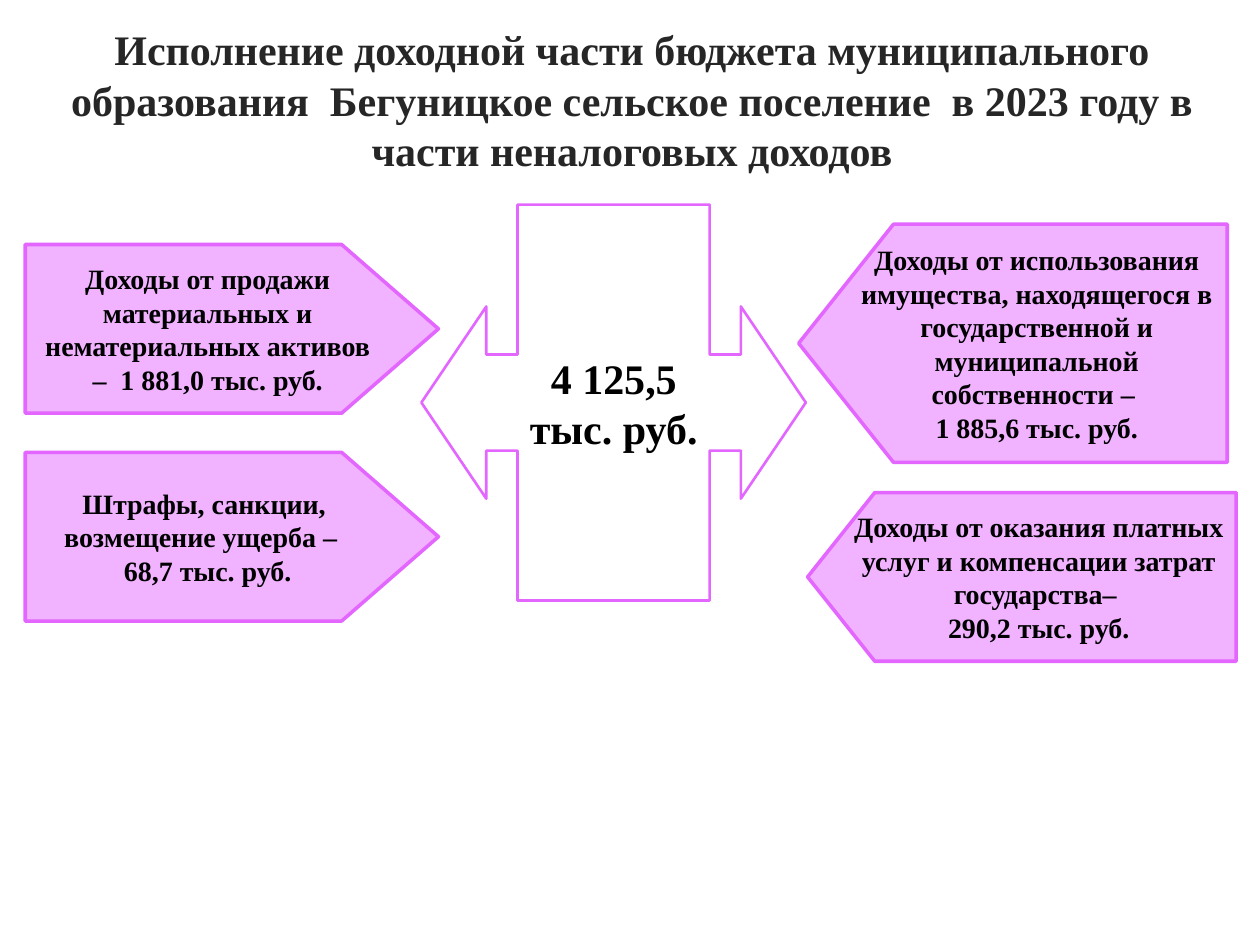
from dataclasses import dataclass

from pptx import Presentation
from pptx.dml.color import RGBColor
from pptx.enum.shapes import MSO_SHAPE
from pptx.enum.text import MSO_ANCHOR, MSO_AUTO_SIZE, PP_ALIGN
from pptx.util import Cm, Pt

PENTAGON = MSO_SHAPE.PENTAGON
CALLOUT = MSO_SHAPE.UP_DOWN_ARROW_CALLOUT
CENTER = PP_ALIGN.CENTER
MIDDLE, BOTTOM = MSO_ANCHOR.MIDDLE, MSO_ANCHOR.BOTTOM
NO_AUTOFIT = MSO_AUTO_SIZE.NONE
TITLE_ONLY = 5


@dataclass(frozen=True)
class Theme:
    font: str = "Times New Roman"
    title: RGBColor = RGBColor(0x26, 0x26, 0x26)
    text: RGBColor = RGBColor(0, 0, 0)
    white: RGBColor = RGBColor(0xFF, 0xFF, 0xFF)
    pink: RGBColor = RGBColor(0xF1, 0xB2, 0xFF)
    outline: RGBColor = RGBColor(0xE3, 0x66, 0xFF)
    large: int = 24
    small: int = 16


THEME = Theme()
PLATE_WIDTH, PLATE_HEIGHT = 8.33, 3.4
RIGHT_WIDTH = 8.64

# Left, top, width, height in cm; point depth; points left; paragraphs
INCOME_PLATES = [
    (16.1, 4.52, RIGHT_WIDTH, 4.8, 0.398, True,
     ["Доходы от использования имущества, находящегося в государственной "
      "и муниципальной собственности – ",
      "1 885,6 тыс. руб."]),
    (0.51, 4.93, PLATE_WIDTH, PLATE_HEIGHT, 0.574, False,
     ["Доходы от продажи материальных и нематериальных активов "
      "–  1 881,0 тыс. руб."]),
    (0.51, 9.12, PLATE_WIDTH, PLATE_HEIGHT, 0.574, False,
     ["Штрафы, санкции, ", "возмещение ущерба –  ", "68,7 тыс. руб."]),
    (16.28, 9.93, RIGHT_WIDTH, PLATE_HEIGHT, 0.398, True,
     ["Доходы от оказания платных услуг и компенсации затрат государства– ",
      "290,2 тыс. руб."]),
]


def write_text(frame, lines, size, color, anchor):
    frame.auto_size = NO_AUTOFIT
    frame.word_wrap = True
    frame.vertical_anchor = anchor
    for index, line in enumerate(lines):
        para = frame.paragraphs[0] if index == 0 else frame.add_paragraph()
        para.alignment = CENTER
        span = para.add_run()
        span.text = line
        span.font.name = THEME.font
        span.font.size = Pt(size)
        span.font.bold = True
        span.font.color.rgb = color


def add_title(page, text):
    box = page.shapes.title
    box.left, box.top, box.width, box.height = Cm(0.69), Cm(0.41), Cm(24.1), Cm(3.12)
    frame = box.text_frame
    frame.margin_left = frame.margin_right = frame.margin_bottom = 0
    frame.margin_top = Cm(0.13)
    write_text(frame, [text], THEME.large, THEME.title, BOTTOM)


def add_outlined_shape(page, kind, place, adjustments, fill, line_width):
    box = page.shapes.add_shape(kind, *map(Cm, place))
    box.shadow.inherit = False
    for index, value in enumerate(adjustments):
        box.adjustments[index] = value
    box.fill.solid()
    box.fill.fore_color.rgb = fill
    box.line.color.rgb = THEME.outline
    box.line.width = Pt(line_width)
    return box


def add_total(page, lines):
    box = add_outlined_shape(page, CALLOUT, (8.38, 4.24, 7.98, 7.75),
                             (0.25, 0.25, 0.169, 0.5), THEME.white, 1.5)
    box.rotation = 270
    write_text(box.text_frame, lines, THEME.large, THEME.text, MIDDLE)
    box.text_frame.word_wrap = False
    # Vertical text cancels the quarter turn of the shape
    box.element.txBody.bodyPr.set("vert", "eaVert")


def add_income_plate(page, left, top, width, height, depth, points_left, lines):
    box = add_outlined_shape(page, PENTAGON, (left, top, width, height),
                             (depth,), THEME.pink, 2)
    write_text(box.text_frame, lines, THEME.small, THEME.text, MIDDLE)
    if points_left:
        # Turn the shape and turn its text back upright
        box.rotation = 180
        box.element.txBody.bodyPr.set("rot", str(180 * 60000))


def main():
    deck = Presentation()
    deck.slide_width, deck.slide_height = Cm(25.4), Cm(19.05)
    page = deck.slides.add_slide(deck.slide_layouts[TITLE_ONLY])

    # Heading
    add_title(page, "Исполнение доходной части бюджета муниципального "
                    "образования  Бегуницкое сельское поселение  в 2023 году "
                    "в части неналоговых доходов")

    # Total in the centre, its parts on both sides
    add_total(page, ["4 125,5", "тыс. руб."])
    for plate in INCOME_PLATES:
        add_income_plate(page, *plate)

    deck.save("out.pptx")


if __name__ == "__main__":
    main()
